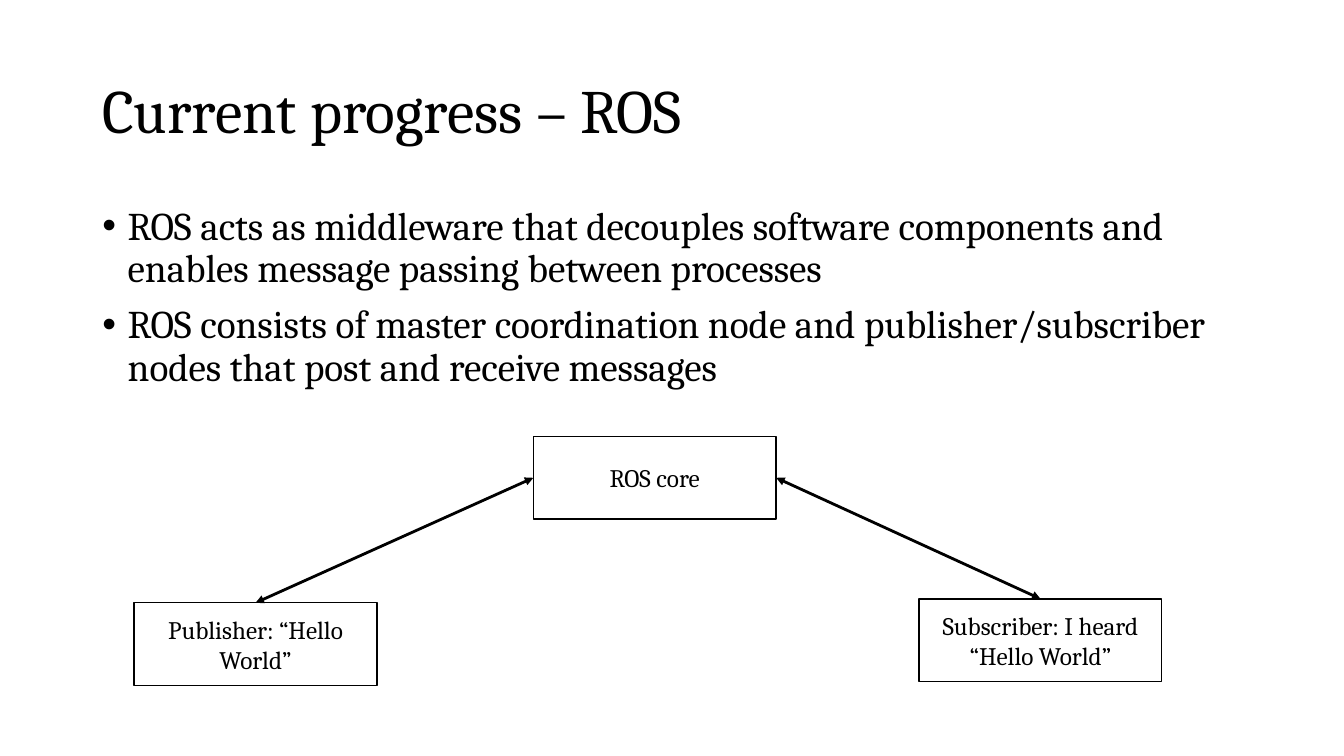
from dataclasses import dataclass

from lxml.etree import SubElement
from pptx import Presentation
from pptx.dml.color import RGBColor
from pptx.enum.shapes import MSO_CONNECTOR as Connector, MSO_SHAPE as Shape
from pptx.enum.text import MSO_ANCHOR as Anchor, PP_ALIGN as Align
from pptx.oxml.ns import qn
from pptx.util import Cm, Pt

TOP, LEFT, RIGHT = 0, 1, 3


@dataclass(frozen=True)
class Theme:
    font: str = "Cambria"
    bullet_font: str = "Arial"
    ink: RGBColor = RGBColor(0, 0, 0)
    paper: RGBColor = RGBColor(255, 255, 255)
    title_size: int = 44
    body_size: int = 28
    node_size: int = 18
    outline: int = 1
    arrow: int = 2


class SlideBuilder:
    def __init__(self, page, theme):
        self.page = page
        self.theme = theme
        page.background.fill.solid()
        page.background.fill.fore_color.rgb = theme.paper

    def style(self, para, size):
        para.font.name = self.theme.font
        para.font.size = Pt(size)
        para.font.color.rgb = self.theme.ink

    def text_frame(self, left, top, width, height, anchor):
        box = self.page.shapes.add_textbox(Cm(left), Cm(top), Cm(width), Cm(height))
        frame = box.text_frame
        frame.word_wrap = True
        frame.vertical_anchor = anchor
        return frame

    def title(self, text, *area):
        para = self.text_frame(*area, Anchor.MIDDLE).paragraphs[0]
        para.text = text
        para.line_spacing = 0.9
        self.style(para, self.theme.title_size)

    def bullets(self, items, *area):
        frame = self.text_frame(*area, Anchor.TOP)
        frame.text = "\n".join(items)
        indent = int(Cm(0.64))
        for para in frame.paragraphs:
            para.line_spacing = 0.9
            para.space_before = Pt(10)
            self.style(para, self.theme.body_size)
            props = para._p.get_or_add_pPr()
            props.set("marL", str(indent))
            props.set("indent", str(-indent))
            bullet_font = SubElement(props, qn("a:buFont"))
            bullet_font.set("typeface", self.theme.bullet_font)
            SubElement(props, qn("a:buChar")).set("char", "•")
            props.append(props.find(qn("a:defRPr")))

    def node(self, text, left, top, width=6.12, height=2.08):
        box = self.page.shapes.add_shape(
            Shape.RECTANGLE, Cm(left), Cm(top), Cm(width), Cm(height))
        box.shadow.inherit = False
        box.fill.solid()
        box.fill.fore_color.rgb = self.theme.paper
        box.line.color.rgb = self.theme.ink
        box.line.width = Pt(self.theme.outline)
        box.text_frame.word_wrap = True
        box.text_frame.vertical_anchor = Anchor.MIDDLE
        para = box.text_frame.paragraphs[0]
        para.text = text
        para.alignment = Align.CENTER
        self.style(para, self.theme.node_size)
        return box

    def double_arrow(self, start, start_side, end, end_side):
        link = self.page.shapes.add_connector(Connector.STRAIGHT, 0, 0, 0, 0)
        link.begin_connect(start, start_side)
        link.end_connect(end, end_side)
        link.line.color.rgb = self.theme.ink
        link.line.width = Pt(self.theme.arrow)
        outline = link.line._get_or_add_ln()
        for tip in ("a:headEnd", "a:tailEnd"):
            SubElement(outline, qn(tip)).set("type", "triangle")
        SubElement(link._element.spPr, qn("a:effectLst"))


def main():
    deck = Presentation()
    deck.slide_width, deck.slide_height = Cm(33.87), Cm(19.05)
    page = deck.slides.add_slide(deck.slide_layouts[6])
    slide = SlideBuilder(page, Theme())

    slide.title("Current progress – ROS", 2.33, 1.01, 29.21, 3.68)
    slide.bullets([
        "ROS acts as middleware that decouples software components and "
        "enables message passing between processes",
        "ROS consists of master coordination node and publisher/subscriber "
        "nodes that post and receive messages",
    ], 2.33, 5.07, 29.21, 12.09)

    core = slide.node("ROS core", 13.44, 11)
    publisher = slide.node("Publisher: “Hello World”", 3.38, 15.19)
    subscriber = slide.node("Subscriber: I heard “Hello World”", 23.16, 15.09)
    slide.double_arrow(publisher, TOP, core, LEFT)
    slide.double_arrow(core, RIGHT, subscriber, TOP)

    deck.save("out.pptx")


if __name__ == "__main__":
    main()
